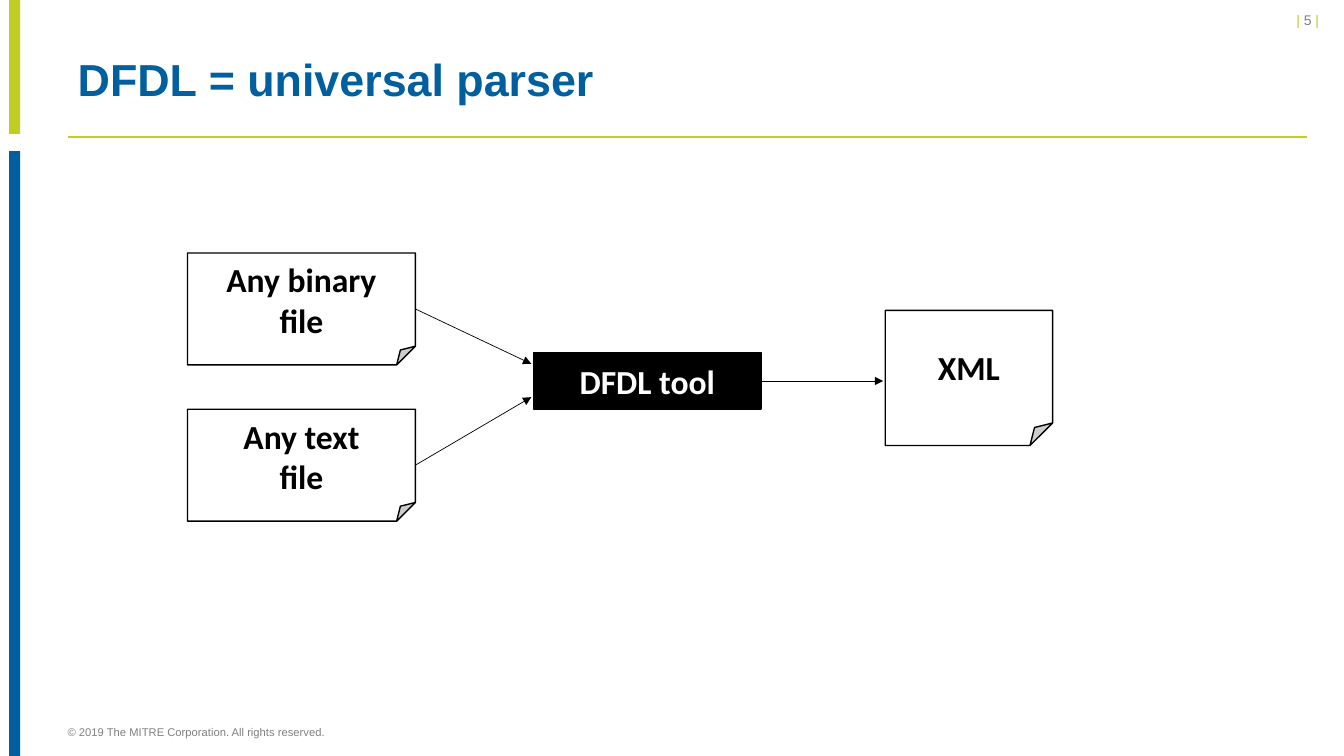
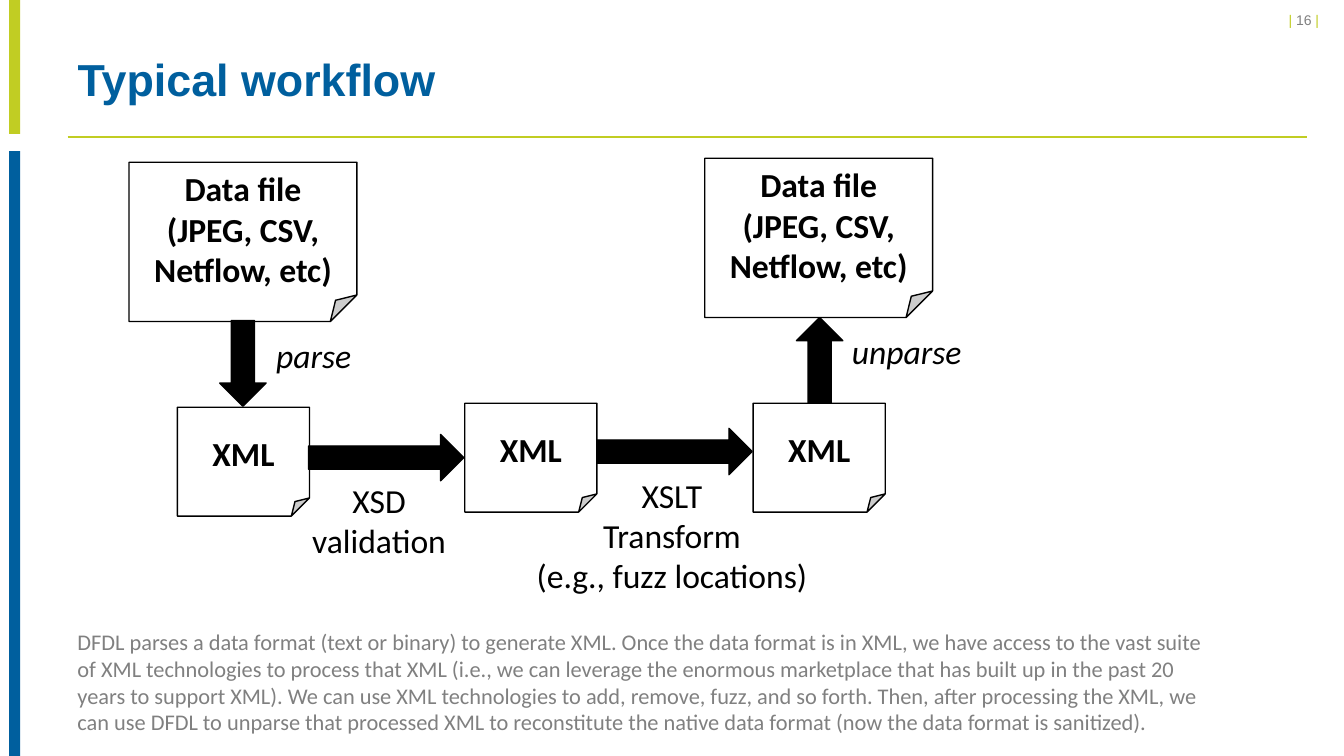
from lxml import etree
from pptx import Presentation
from pptx.dml.color import RGBColor
from pptx.enum.shapes import MSO_CONNECTOR, MSO_SHAPE as SHAPE
from pptx.enum.text import MSO_ANCHOR, MSO_AUTO_SIZE, PP_ALIGN as ALIGN
from pptx.oxml.ns import qn
from pptx.util import Inches, Pt

LIME = RGBColor(0xC1, 0xCD, 0x23)
BLUE = RGBColor(0x00, 0x5F, 0x9E)
GRAY = RGBColor(0x80, 0x80, 0x80)
BLACK = RGBColor(0, 0, 0)
WHITE = RGBColor(255, 255, 255)
TITLE_ONLY = 5
RIGHT_SITE = 3

COPYRIGHT = "© 2019 The MITRE Corporation. All rights reserved."

# Boxes are (left, top, width, height) in inches.
INPUT_FILES = [
    (["Any binary", "file"], (1.86, 2.51, 2.26, 1.11), (5.27, 3.61)),
    (["Any text", "file"], (1.86, 4.06, 2.26, 1.11), (5.27, 3.94)),
]
TOOL_BOX = (5.29, 3.5, 2.26, 0.56)
RESULT_BOX = (8.78, 3.08, 1.66, 1.34)
RESULT_ARROW_END = (8.76, 3.78)

DATA_FILE = ["Data file", "(JPEG, CSV, Netflow, etc)"]
WORKFLOW_FILES = [
    (DATA_FILE, (1.28, 1.61, 2.26, 1.58)),
    (["XML"], (1.76, 4.04, 1.31, 1.08)),
    (["XML"], (4.61, 4, 1.31, 1.08)),
    (["XML"], (7.47, 4, 1.31, 1.08)),
    (DATA_FILE, (6.99, 1.57, 2.26, 1.58)),
]
WORKFLOW_ARROWS = [
    (SHAPE.DOWN_ARROW, (2.18, 3.18, 0.46, 0.85)),
    (SHAPE.RIGHT_ARROW, (3.06, 4.31, 1.54, 0.46)),
    (SHAPE.RIGHT_ARROW, (5.92, 4.25, 1.54, 0.46)),
    (SHAPE.UP_ARROW, (7.9, 3.15, 0.46, 0.85)),
]
STEP_LABELS = [
    (["parse"], (2.64, 3.27, 0.96, 0.5), ALIGN.LEFT, True),
    (["XSD", "validation"], (2.99, 4.71, 1.54, 0.91), ALIGN.CENTER, False),
    (["XSLT", "Transform", "(e.g., fuzz locations)"],
     (5.21, 4.66, 2.91, 1.31), ALIGN.CENTER, False),
    (["unparse"], (8.35, 3.23, 1.3, 0.5), ALIGN.LEFT, True),
]
EXPLANATION = (
    "DFDL parses a data format (text or binary) to generate XML. Once the data "
    "format is in XML, we have access to the vast suite of XML technologies to "
    "process that XML (i.e., we can leverage the enormous marketplace that has "
    "built up in the past 20 years to support XML). We can use XML technologies "
    "to add, remove, fuzz, and so forth. Then, after processing the XML, we can "
    "use DFDL to unparse that processed XML to reconstitute the native data "
    "format (now the data format is sanitized)."
)


def inches(values):
    return [Inches(value) for value in values]


def set_font(font, size, color, name="Calibri", bold=False, italic=False):
    font.size, font.name = Pt(size), name
    font.bold, font.italic = bold, italic
    font.color.rgb = color


def write_lines(frame, lines, align, size, color, **style):
    """Fill a text frame with one paragraph per line, all in one style."""
    for index, line in enumerate(lines):
        para = frame.add_paragraph() if index else frame.paragraphs[0]
        para.text = line
        para.alignment = align
        set_font(para.font, size, color, **style)


def add_text(page, lines, box, align=ALIGN.LEFT, size=24, color=BLACK,
             wrap=True, **style):
    frame = page.shapes.add_textbox(*inches(box)).text_frame
    frame.word_wrap = wrap
    write_lines(frame, lines, align, size, color, **style)
    return frame


def add_block(page, kind, box, fill, line=BLACK, lines=(), color=BLACK):
    block = page.shapes.add_shape(kind, *inches(box))
    block.shadow.inherit = False
    block.fill.solid()
    block.fill.fore_color.rgb = fill
    if line is None:
        block.line.fill.background()
    else:
        block.line.color.rgb = line
        block.line.width = Pt(1)
    block.text_frame.vertical_anchor = MSO_ANCHOR.MIDDLE
    write_lines(block.text_frame, lines, ALIGN.CENTER, 24, color, bold=True)
    return block


def add_file(page, lines, box):
    return add_block(page, SHAPE.FOLDED_CORNER, box, WHITE, lines=lines)


def add_line(page, start, end, color, width):
    line = page.shapes.add_connector(
        MSO_CONNECTOR.STRAIGHT, *inches(start), *inches(end))
    line.line.color.rgb = color
    line.line.width = Pt(width)
    etree.SubElement(line._element.spPr, qn("a:effectLst"))
    return line


def add_flow(page, source, end):
    """Draw an arrow from the right side of a block to a point."""
    arrow = add_line(page, end, end, BLACK, 0.5)
    arrow.begin_connect(source, RIGHT_SITE)
    etree.SubElement(arrow.line._get_or_add_ln(), qn("a:tailEnd"),
                     type="triangle")


def add_page(deck, title, number):
    """Add a slide with the side bands, title, rule and page number."""
    page = deck.slides.add_slide(deck.slide_layouts[TITLE_ONLY])
    add_block(page, SHAPE.RECTANGLE, (0.09, 0, 0.11, 1.33), LIME, line=None)
    add_block(page, SHAPE.RECTANGLE, (0.09, 1.5, 0.11, 6), BLUE, line=None)
    add_line(page, (0.67, 1.36), (12.96, 1.36), LIME, 1)

    heading = page.shapes.title
    heading.left, heading.top, heading.width, heading.height = inches(
        (0.67, 0.4, 12.29, 0.82))
    frame = heading.text_frame
    frame.auto_size = MSO_AUTO_SIZE.NONE
    frame.vertical_anchor = MSO_ANCHOR.MIDDLE
    write_lines(frame, [title], ALIGN.LEFT, 32, BLUE, name="Arial", bold=True)
    frame.paragraphs[0].line_spacing = 0.9

    para = add_text(page, [""], (10.88, 0.07, 2.34, 0.27), ALIGN.RIGHT,
                    10, LIME, name="Arial").paragraphs[0]
    para.space_after = Pt(6)
    for text, color in (("| ", LIME), (f"{number} ", GRAY), ("| ", LIME)):
        span = para.add_run()
        span.text = text
        set_font(span.font, 10, color, name="Arial")
    return page


def add_parser_page(deck):
    page = add_page(deck, "DFDL = universal parser", 5)
    footer = add_text(page, [COPYRIGHT], (0.67, 7.13, 8.24, 0.26),
                      size=8, color=GRAY, name="Arial")
    footer.vertical_anchor = MSO_ANCHOR.MIDDLE
    footer.margin_left = footer.margin_right = 0
    footer.margin_top = footer.margin_bottom = 0
    for lines, box, arrow_end in INPUT_FILES:
        add_flow(page, add_file(page, lines, box), arrow_end)
    tool = add_block(page, SHAPE.RECTANGLE, TOOL_BOX, BLACK,
                     lines=["DFDL tool"], color=WHITE)
    add_file(page, ["XML"], RESULT_BOX)
    add_flow(page, tool, RESULT_ARROW_END)


def add_workflow_page(deck):
    page = add_page(deck, "Typical workflow", 16)
    for lines, box in WORKFLOW_FILES:
        add_file(page, lines, box)
    for kind, box in WORKFLOW_ARROWS:
        add_block(page, kind, box, BLACK)
    for lines, box, align, italic in STEP_LABELS:
        add_text(page, lines, box, align, wrap=False, italic=italic)
    add_text(page, [EXPLANATION], (0.67, 6.18, 11.38, 1.18),
             size=16, color=GRAY)


def main():
    deck = Presentation()
    deck.slide_width, deck.slide_height = inches((13.33, 7.5))
    add_parser_page(deck)
    add_workflow_page(deck)
    deck.save("out.pptx")


if __name__ == "__main__":
    main()
